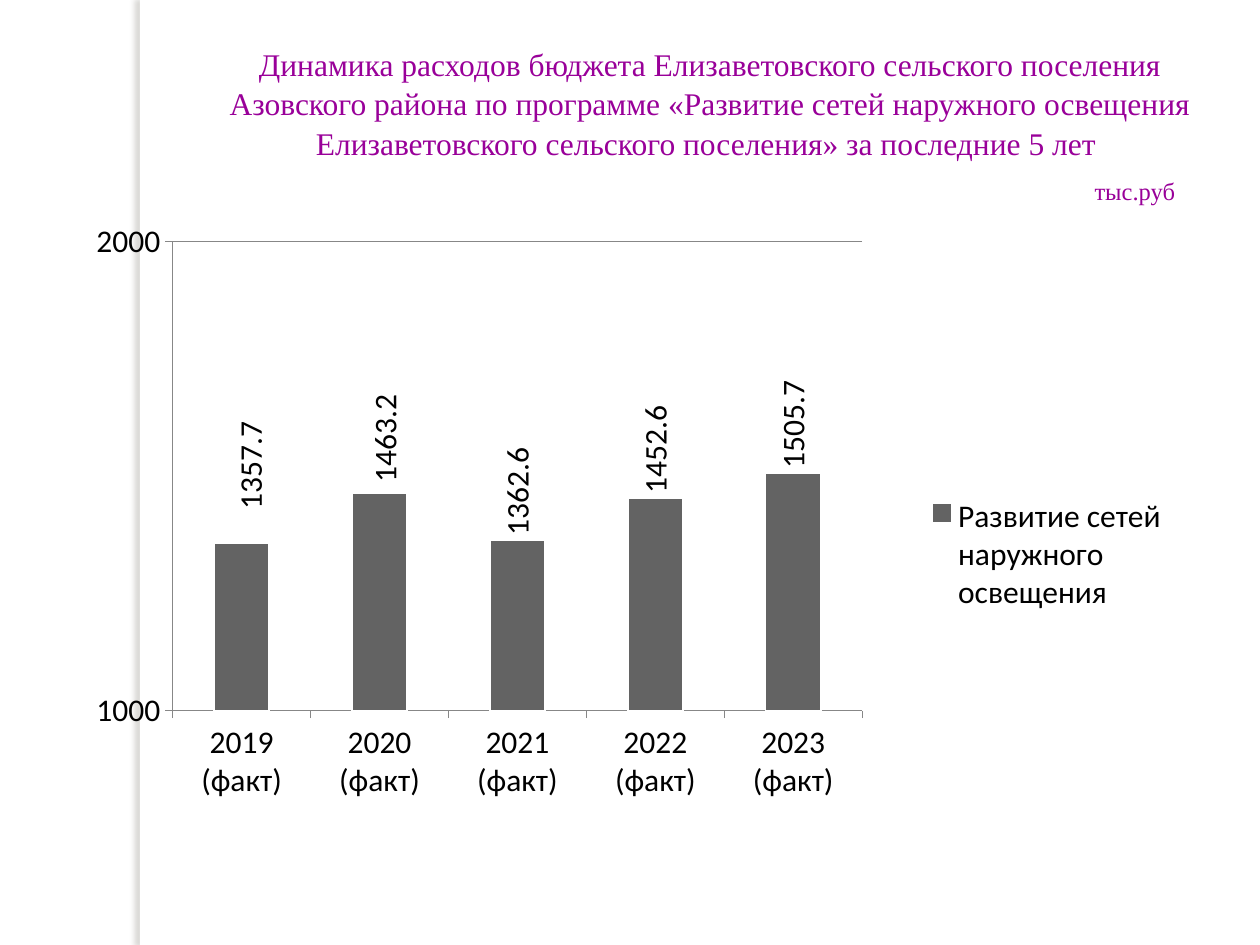
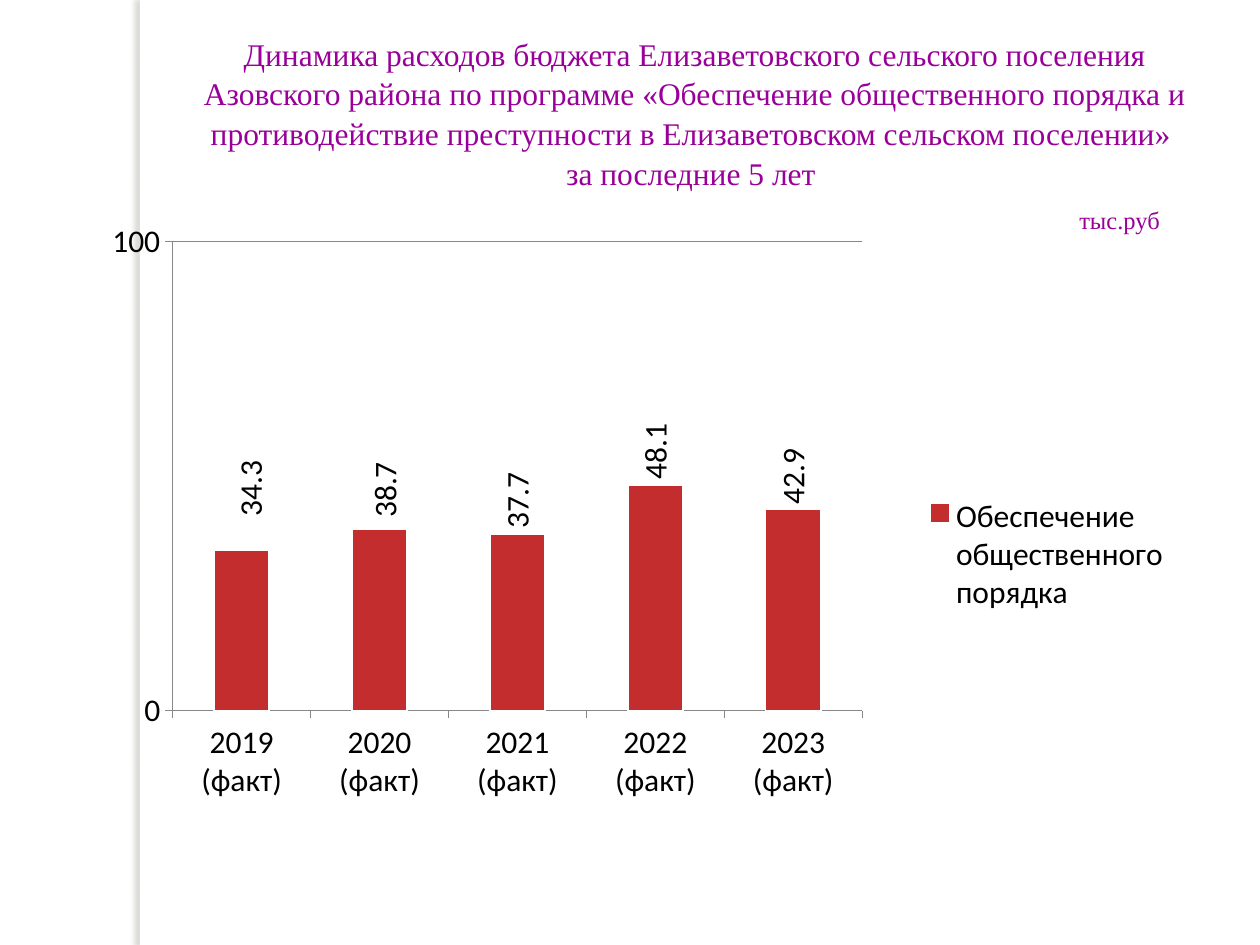
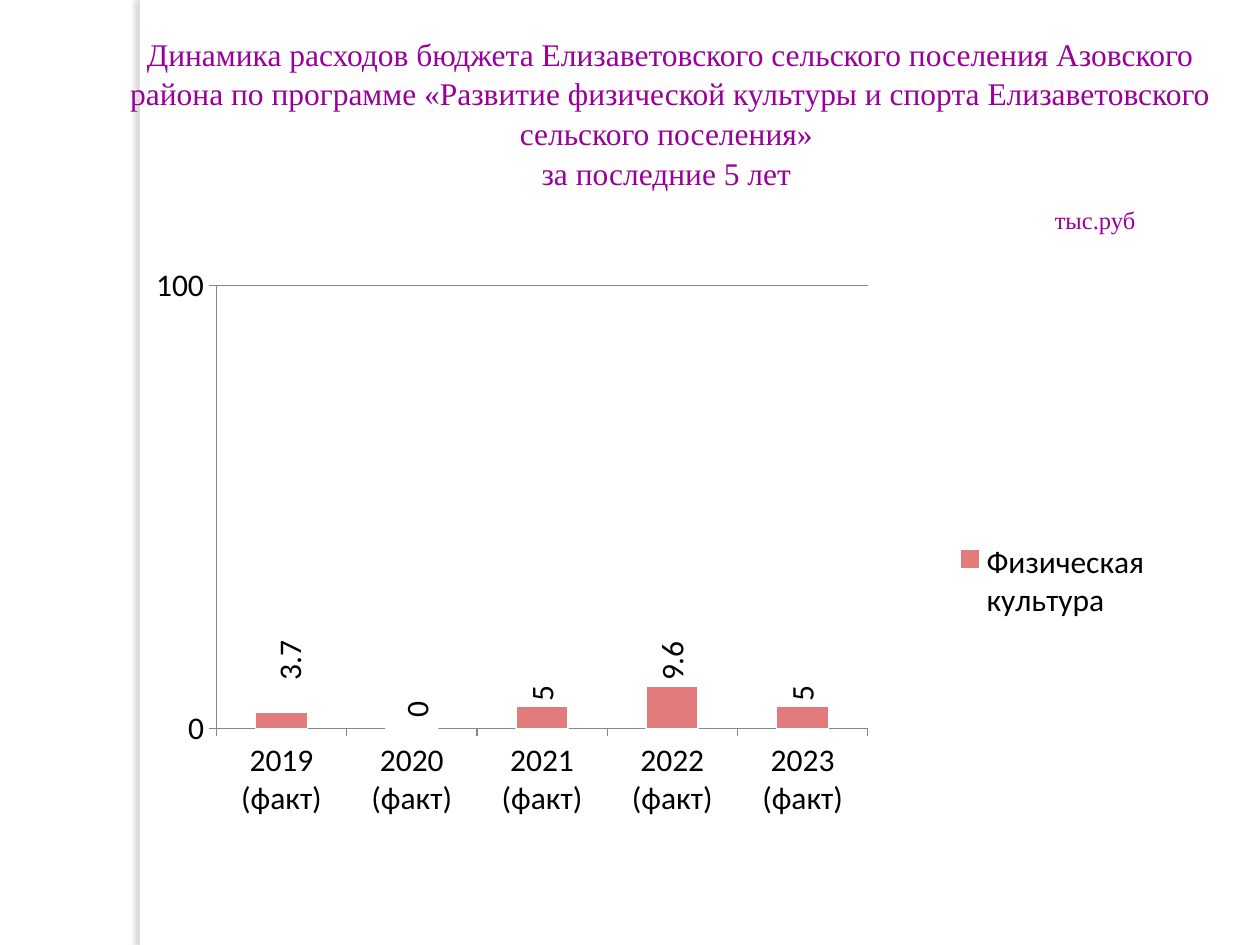
from dataclasses import dataclass

from lxml import etree
from pptx import Presentation
from pptx.chart.data import CategoryChartData
from pptx.dml.color import RGBColor
from pptx.enum.chart import XL_CHART_TYPE as ChartType
from pptx.enum.chart import XL_LABEL_POSITION as LabelPosition
from pptx.enum.chart import XL_LEGEND_POSITION as LegendPosition
from pptx.enum.chart import XL_TICK_LABEL_POSITION as TickLabels
from pptx.enum.chart import XL_TICK_MARK as TickMark
from pptx.enum.shapes import MSO_SHAPE as Shape
from pptx.enum.text import MSO_AUTO_SIZE as AutoSize
from pptx.enum.text import PP_ALIGN as Align
from pptx.oxml.ns import qn
from pptx.util import Inches, Pt


@dataclass(frozen=True)
class Theme:
    white: str = "FFFFFF"
    title: str = "990099"
    shadow: str = "736F63"
    axis: str = "878787"
    chart_text: str = "000000"
    title_font: str = "Times New Roman"
    chart_font: str = "Calibri"
    body_size: int = 18
    unit_size: int = 14


# Text and values
YEARS = [f"{year} (факт)" for year in range(2019, 2024)]
INTRO = "Динамика расходов бюджета Елизаветовского сельского поселения Азовского района по программе "
PERIOD = "за последние 5 лет "
UNIT = "тыс.руб"
UNIT_REACH = 3.69  # from the middle of the title to the end of the unit
FULL_CHART = (0.59, 1.74, 8.87, 4.84)

PROGRAMMES = [
    {
        "title": [INTRO + "«Развитие сетей наружного освещения Елизаветовского сельского поселения» " + PERIOD],
        "title_box": (1.54, 0.29, 8.19, 1.35),
        "chart_box": FULL_CHART,
        "series": "Развитие сетей наружного освещения",
        "values": [1357.7, 1463.2, 1362.6, 1452.6, 1505.7],
        "scale": (1000, 2000),
        "color": "636363",
        "legend": (0.75, 0.45, 0.24, 0.2),
    },
    {
        "title": [
            INTRO + "«Обеспечение общественного порядка и противодействие преступности "
            "в Елизаветовском сельском поселении» ",
            PERIOD,
        ],
        "title_box": (1.3, 0.21, 8.43, 1.65),
        "chart_box": FULL_CHART,
        "series": "Обеспечение общественного порядка",
        "values": [34.3, 38.7, 37.7, 48.1, 42.9],
        "scale": (0, 100),
        "color": "C32D2E",
        "legend": (0.75, 0.45, 0.24, 0.2),
    },
    {
        "title": [
            INTRO + "«Развитие физической культуры и спорта Елизаветовского сельского поселения» ",
            PERIOD,
        ],
        "title_box": (0.91, 0.21, 8.82, 1.65),
        "chart_box": (0.98, 2.1, 8.38, 4.57),
        "series": "Физическая культура",
        "values": [3.7, 0, 5, 9.6, 5],
        "scale": (0, 100),
        "color": "E17B7C",
        "legend": (0.77, 0.48, 0.22, 0.14),
    },
]


def apply(target, values):
    for name, value in values.items():
        setattr(target, name, value)


def rgb(color):
    return RGBColor.from_string(color)


def set_layout(parent, index, values, modes=()):
    """Give a chart part a manual layout, in fractions of the chart."""
    for old in parent.findall(qn("c:layout")):
        parent.remove(old)
    layout = etree.Element(qn("c:layout"))
    manual = etree.SubElement(layout, qn("c:manualLayout"))
    for name, value in (*modes, *zip("xywh", values)):
        etree.SubElement(manual, qn(f"c:{name}"), val=str(value))
    parent.insert(index, layout)


class Deck:
    def __init__(self, theme):
        self.theme = theme
        self.presentation = Presentation()
        apply(self.presentation, {"slide_width": Inches(10), "slide_height": Inches(7.5)})
        self.slide = None

    def add_slide(self):
        self.slide = self.presentation.slides.add_slide(self.presentation.slide_layouts[6])
        self.add_band()

    def add_band(self):
        band = self.slide.shapes.add_shape(
            Shape.RECTANGLE, Inches(1.11), 0, Inches(0.08), Inches(7.5))
        band.fill.solid()
        band.fill.fore_color.rgb = rgb(self.theme.white)
        band.line.fill.background()
        band.shadow.inherit = False
        # Soft shadow to the left
        effects = band._element.spPr.find(qn("a:effectLst"))
        shadow = etree.SubElement(effects, qn("a:outerShdw"), blurRad=str(Pt(3)),
                                  dist=str(Pt(3)), dir="10800000", rotWithShape="0")
        color = etree.SubElement(shadow, qn("a:srgbClr"), val=self.theme.shadow)
        etree.SubElement(color, qn("a:alpha"), val="25000")

    def add_title(self, lines, box):
        frame = self.slide.shapes.add_textbox(*map(Inches, box)).text_frame
        apply(frame, {"word_wrap": True, "auto_size": AutoSize.SHAPE_TO_FIT_TEXT})
        for index, text in enumerate([*lines, UNIT]):
            paragraph = frame.add_paragraph() if index else frame.paragraphs[0]
            apply(paragraph, {"text": text, "alignment": Align.CENTER, "line_spacing": 1.05})
            font = paragraph.runs[0].font
            apply(font, {"name": self.theme.title_font, "size": Pt(self.theme.body_size)})
            font.color.rgb = rgb(self.theme.title)
        # The unit stands at a fixed distance from the middle
        apply(paragraph, {"alignment": Align.RIGHT, "space_before": Pt(7)})
        font.size = Pt(self.theme.unit_size)
        indent = Inches(box[2] / 2 - 0.1 - UNIT_REACH)
        paragraph._p.get_or_add_pPr().set("marR", str(indent))

    def add_column_chart(self, name, values, box, scale, color, legend_box):
        data = CategoryChartData(number_format="General")
        data.categories = YEARS
        data.add_series(name, values)
        chart = self.slide.shapes.add_chart(
            ChartType.COLUMN_CLUSTERED, *map(Inches, box), data).chart
        apply(chart, {"has_title": False, "has_legend": True})
        self.style_font(chart.font)
        set_layout(chart._chartSpace.chart.plotArea, 0, (0.088, 0.036, 0.617, 0.77),
                   (("layoutTarget", "inner"), ("xMode", "edge"), ("yMode", "edge")))

        # Legend
        apply(chart.legend, {"position": LegendPosition.RIGHT, "include_in_layout": False})
        set_layout(chart.legend._element, 1, legend_box, (("xMode", "edge"), ("yMode", "edge")))

        # Axes
        low, high = scale
        apply(chart.category_axis, {"tick_label_position": TickLabels.LOW})
        apply(chart.value_axis, {"minimum_scale": low, "maximum_scale": high,
                                 "major_unit": high - low, "has_major_gridlines": True})
        for axis in (chart.category_axis, chart.value_axis):
            apply(axis, {"major_tick_mark": TickMark.OUTSIDE, "minor_tick_mark": TickMark.NONE})
            self.style_line(axis.format.line, self.theme.axis, 0.75)
        self.style_line(chart.value_axis.major_gridlines.format.line, self.theme.axis, 0.75)

        # Columns
        plot = chart.plots[0]
        apply(plot, {"gap_width": 150, "vary_by_categories": False})
        series = plot.series[0]
        series.format.fill.solid()
        series.format.fill.fore_color.rgb = rgb(color)
        self.style_line(series.format.line, self.theme.white, 1)
        self.add_value_labels(series)

    def add_value_labels(self, series):
        apply(series.data_labels, {"show_value": True, "position": LabelPosition.OUTSIDE_END})
        self.style_font(series.data_labels.font)
        for index in range(2):
            label = series.points[index].data_label
            label.position = LabelPosition.OUTSIDE_END
            self.style_font(label.font)
        # The first two labels are moved a little; all are turned upright
        moves = ((0.008, -0.047), (0.005, -0.01))
        for element, move in zip(series._element.xpath(".//c:dLbl"), moves):
            set_layout(element, 1, move)
        for body in series._element.xpath("./c:dLbls//a:bodyPr"):
            body.set("rot", "-5400000")
            body.set("vert", "horz")

    def style_font(self, font):
        apply(font, {"name": self.theme.chart_font, "size": Pt(self.theme.body_size),
                     "bold": False})
        font.color.rgb = rgb(self.theme.chart_text)

    def style_line(self, line, color, width):
        line.color.rgb = rgb(color)
        line.width = Pt(width)


def main():
    deck = Deck(Theme())
    for programme in PROGRAMMES:
        deck.add_slide()
        deck.add_title(programme["title"], programme["title_box"])
        deck.add_column_chart(programme["series"], programme["values"], programme["chart_box"],
                              programme["scale"], programme["color"], programme["legend"])
    deck.presentation.save("out.pptx")


if __name__ == "__main__":
    main()
